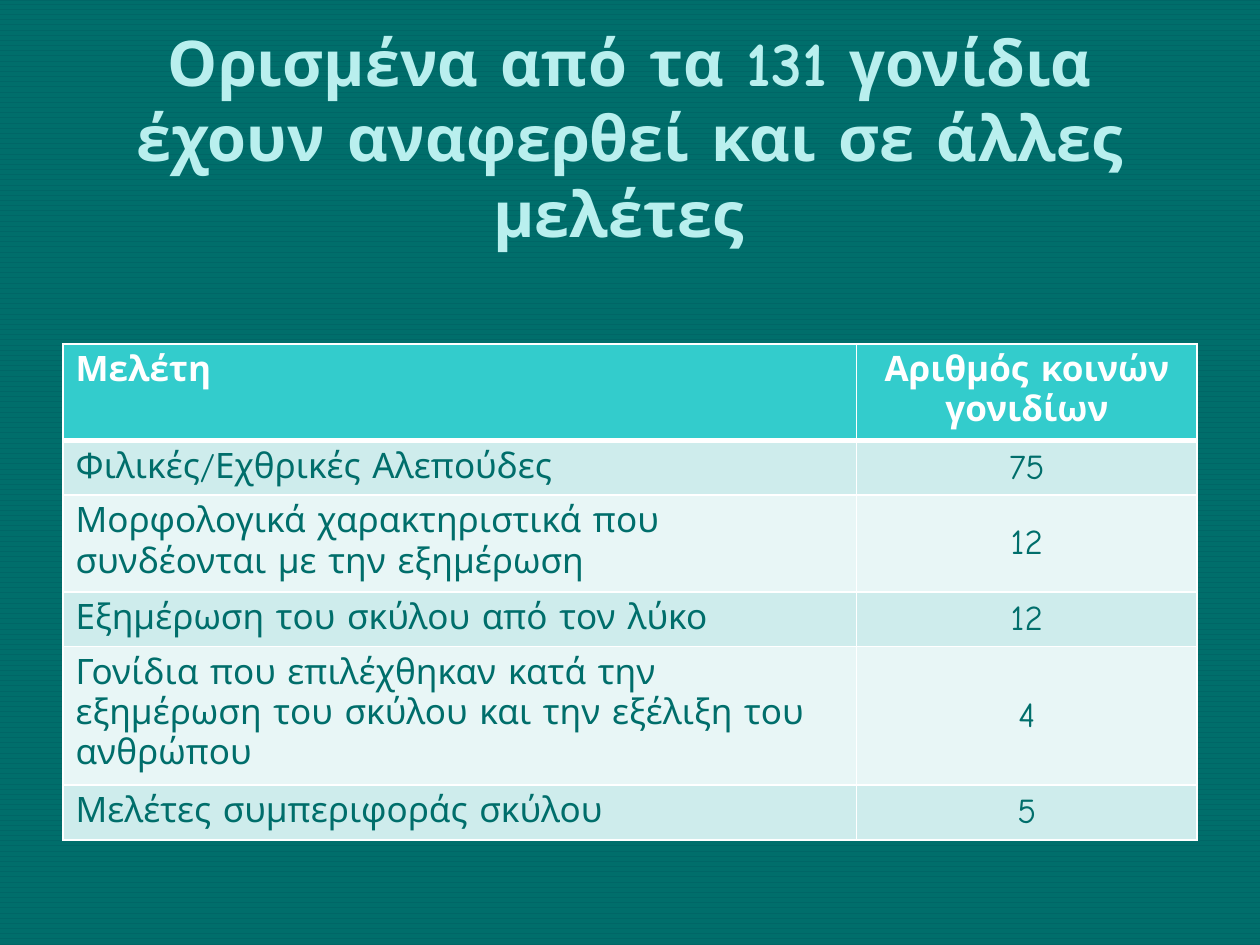
import pptx
import pptx.dml.color
import pptx.enum.dml
import pptx.enum.text
import pptx.oxml
import pptx.oxml.ns
import pptx.util
from pptx.util import Cm

COLORS = {
    "back": "006666", "stripe": "006E6B", "title": "B9EFEE", "text": "006E6B",
    "white": "FFFFFF", "head": "33CCCC", "odd": "CEECEC", "even": "E8F6F6",
}
CENTER = pptx.enum.text.PP_ALIGN.CENTER
LEFT = pptx.enum.text.PP_ALIGN.LEFT
TOP = pptx.enum.text.MSO_ANCHOR.TOP
MIDDLE = pptx.enum.text.MSO_ANCHOR.MIDDLE

TITLE = "Ορισμένα από τα 131 γονίδια έχουν αναφερθεί και σε άλλες μελέτες "
STUDIES = [
    ("Μελέτη", "Αριθμός κοινών γονιδίων"),
    ("Φιλικές/Εχθρικές Αλεπούδες", "75"),
    ("Μορφολογικά χαρακτηριστικά που συνδέονται με την εξημέρωση", "12"),
    ("Εξημέρωση του σκύλου από τον λύκο", "12"),
    ("Γονίδια που επιλέχθηκαν κατά την εξημέρωση του σκύλου "
     "και την εξέλιξη του ανθρώπου", "4"),
    ("Μελέτες συμπεριφοράς σκύλου", "5"),
]


def rgb(name):
    return pptx.dml.color.RGBColor.from_string(COLORS[name])


class Deck:
    """Holds the text style and the current slide."""

    font = "Comic Neue"

    def __init__(self, slide):
        self.s = slide

    def background(self, fore, back):
        fill = self.s.background.fill
        fill.patterned()
        fill.pattern = pptx.enum.dml.MSO_PATTERN.DARK_HORIZONTAL
        fill.fore_color.rgb = rgb(fore)
        fill.back_color.rgb = rgb(back)

    def add_text(self, tf, text, color, size, bold, align):
        p = tf.paragraphs[0]
        p.alignment = align
        r = p.add_run()
        r.text = text
        style = {"name": self.font, "size": pptx.util.Pt(size), "bold": bold}
        for key, value in style.items():
            setattr(r.font, key, value)
        r.font.color.rgb = rgb(color)

    def title(self, text, x, y, w, h):
        tf = self.s.shapes.add_textbox(x, y, w, h).text_frame
        tf.word_wrap = True
        tf.vertical_anchor = MIDDLE
        self.add_text(tf, text, "title", 36, True, CENTER)

    def borders(self, cell, bottom):
        tc_pr = cell._tc.get_or_add_tcPr()
        widths = {"lnL": 1, "lnR": 1, "lnT": 1, "lnB": bottom}
        for i, (tag, width) in enumerate(widths.items()):
            tc_pr.insert(i, pptx.oxml.parse_xml(
                f'<a:{tag} {pptx.oxml.ns.nsdecls("a")} w="{pptx.util.Pt(width)}">'
                f'<a:solidFill><a:srgbClr val="{COLORS["white"]}"/></a:solidFill>'
                f'</a:{tag}>'))

    def table(self, rows, x, y, widths, row_height):
        table = self.s.shapes.add_table(
            len(rows), len(widths), x, y, sum(widths), row_height * len(rows)).table
        for column, width in zip(table.columns, widths):
            column.width = width
        for i, row in enumerate(rows):
            head = i == 0
            fill = "head" if head else "odd" if i % 2 else "even"
            for j, text in enumerate(row):
                cell = table.cell(i, j)
                cell.fill.solid()
                cell.fill.fore_color.rgb = rgb(fill)
                cell.vertical_anchor = MIDDLE if j and not head else TOP
                self.add_text(cell.text_frame, text, "white" if head else "text",
                              20, head, CENTER if j else LEFT)
                self.borders(cell, 3 if head else 1)


def main():
    prs = pptx.Presentation()
    prs.slide_width, prs.slide_height = Cm(25.4), Cm(19.05)
    deck = Deck(prs.slides.add_slide(prs.slide_layouts[6]))

    # Striped background and heading
    deck.background("stripe", "back")
    deck.title(TITLE, Cm(1.27), Cm(0.76), Cm(22.86), Cm(3.99))

    # Shared genes per study; rows grow with their text
    deck.table(STUDIES, Cm(1.27), Cm(6.93), [Cm(16), Cm(6.86)], Cm(1.04))

    prs.save("out.pptx")


if __name__ == "__main__":
    main()
